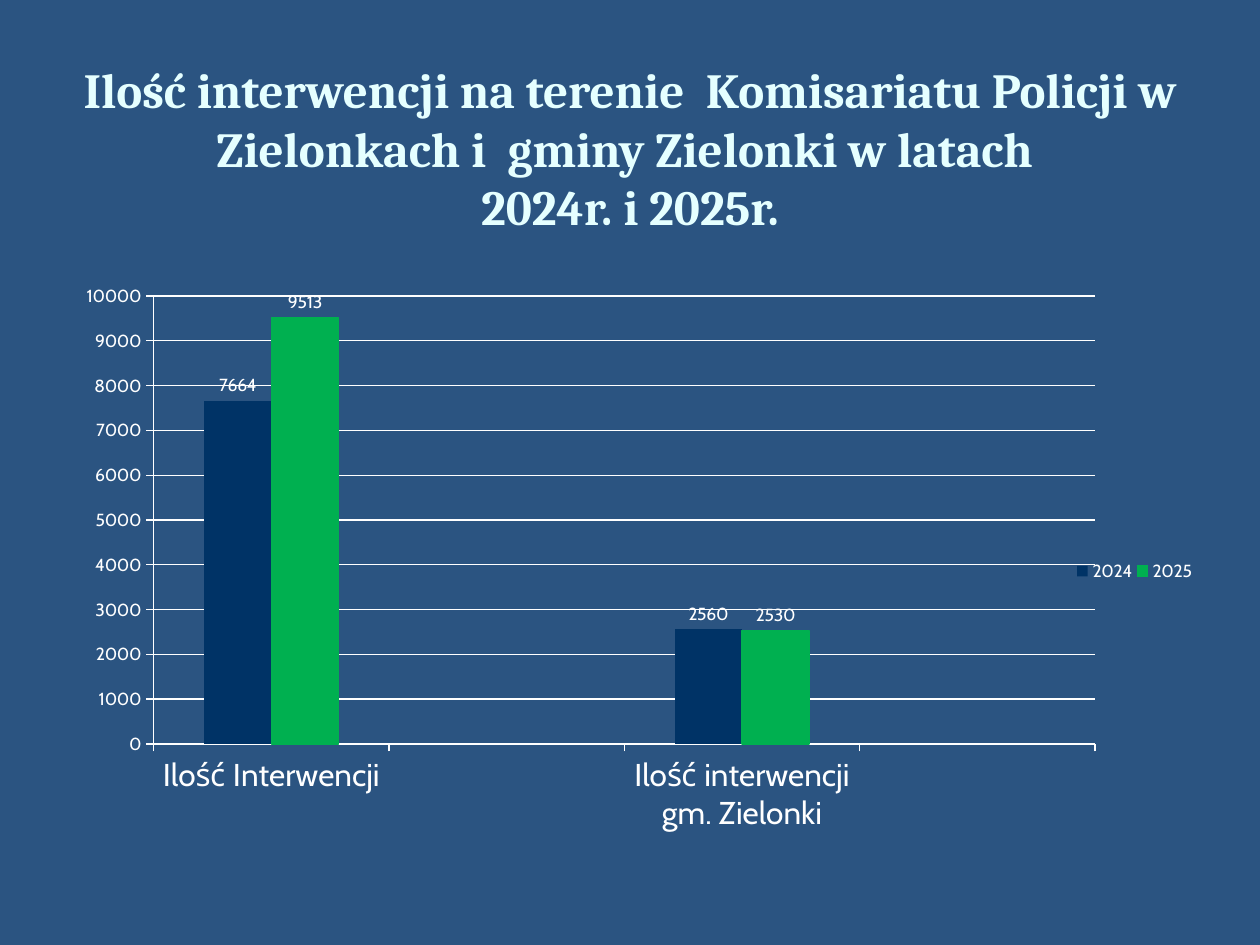
from dataclasses import dataclass

from lxml import etree
from pptx import Presentation
from pptx import util as u
from pptx.chart import data as chart_data
from pptx.dml.color import RGBColor
from pptx.enum import chart as chart_enum
from pptx.enum import text
from pptx.oxml.ns import qn

BACKGROUND = RGBColor(0x2B, 0x54, 0x81)
TITLE_COLOR = RGBColor(0xE5, 0xFF, 0xFF)
WHITE = RGBColor(0xFF, 0xFF, 0xFF)
NAVY = RGBColor(0x00, 0x33, 0x66)
GREEN = RGBColor(0x00, 0xB0, 0x50)

TITLE = ("Ilość interwencji na terenie  Komisariatu Policji w Zielonkach i  "
         "gminy Zielonki w latach \v2024r. i 2025r.")
CATEGORIES = ["Ilość Interwencji", "", "Ilość interwencji gm. Zielonki", ""]


@dataclass
class YearSeries:
    name: str
    values: list
    color: RGBColor


YEARS = [
    YearSeries("2024", [7664, None, 2560, None], NAVY),
    YearSeries("2025", [9513, None, 2530, None], GREEN),
]


def set_font(font, size: float, color: RGBColor = WHITE, name: str = "Cabin") -> None:
    font.name = name
    font.size = u.Pt(size)
    font.color.rgb = color


def set_layout(parent, index: int, bounds: dict, inner: bool = False) -> None:
    """Fix a chart part's place, in fractions of the chart area."""
    for old in parent.findall(qn("c:layout")):
        parent.remove(old)
    layout = etree.Element(qn("c:layout"))
    manual = etree.SubElement(layout, qn("c:manualLayout"))
    settings = {"layoutTarget": "inner"} if inner else {}
    settings |= {"xMode": "edge", "yMode": "edge"} | bounds
    for tag, value in settings.items():
        etree.SubElement(manual, qn(f"c:{tag}")).set("val", str(value))
    parent.insert(index, layout)


def add_title(slide) -> None:
    title = slide.shapes.title
    title.left, title.top = u.Inches(0.5), u.Inches(0.42)
    title.width, title.height = u.Inches(9), u.Inches(1.5)
    frame = title.text_frame
    frame.text = TITLE
    frame.word_wrap = True
    frame.auto_size = text.MSO_AUTO_SIZE.NONE
    frame.vertical_anchor = text.MSO_ANCHOR.MIDDLE
    para = frame.paragraphs[0]
    para.alignment = text.PP_ALIGN.CENTER
    for span in para.runs:
        set_font(span.font, 28, TITLE_COLOR, "Cambria")
        span.font.bold = True


def format_axes(chart) -> None:
    values, categories = chart.value_axis, chart.category_axis
    values.minimum_scale, values.maximum_scale = 0, 10000
    values.major_unit = 1000
    values.has_major_gridlines = True
    for axis, size in ((values, 10), (categories, 18)):
        axis.major_tick_mark = chart_enum.XL_TICK_MARK.OUTSIDE
        axis.minor_tick_mark = chart_enum.XL_TICK_MARK.NONE
        set_font(axis.tick_labels.font, size)
    for line in (values.format.line, categories.format.line,
                 values.major_gridlines.format.line):
        line.color.rgb = WHITE
        line.width = u.Pt(0.75)


def format_series(plot) -> None:
    plot.gap_width = 150
    plot.overlap = 0
    plot.vary_by_categories = False
    for series, year in zip(plot.series, YEARS):
        series.format.fill.solid()
        series.format.fill.fore_color.rgb = year.color
        series.invert_if_negative = False
        labels = series.data_labels
        labels.show_value = True
        labels.position = chart_enum.XL_LABEL_POSITION.OUTSIDE_END
        set_font(labels.font, 10)
    green_line = plot.series[1].format.line
    green_line.color.rgb = GREEN
    green_line.width = u.Pt(0.75)


def add_interventions_chart(slide) -> None:
    data = chart_data.CategoryChartData()
    data.categories = CATEGORIES
    for year in YEARS:
        data.add_series(year.name, year.values)
    chart = slide.shapes.add_chart(
        chart_enum.XL_CHART_TYPE.COLUMN_CLUSTERED,
        u.Inches(0.5), u.Inches(2.17), u.Inches(9), u.Inches(4.5), data).chart
    chart.has_title = False
    set_font(chart.font, 18)
    format_axes(chart)
    format_series(chart.plots[0])
    chart.has_legend = True
    legend = chart.legend
    legend.position = chart_enum.XL_LEGEND_POSITION.RIGHT
    legend.include_in_layout = False
    set_font(legend.font, 10)
    plot_area = chart.element.find(".//" + qn("c:plotArea"))
    set_layout(plot_area, 0, {"x": 0.08, "y": 0.04, "w": 0.83, "h": 0.79}, inner=True)
    legend_element = chart.element.find(".//" + qn("c:legend"))
    set_layout(legend_element, 1, {"x": 0.89, "y": 0.5, "w": 0.11, "h": 0.05})


def main() -> None:
    deck = Presentation()
    deck.slide_width, deck.slide_height = u.Inches(10), u.Inches(7.5)
    page = deck.slides.add_slide(deck.slide_layouts[5])
    page.background.fill.solid()
    page.background.fill.fore_color.rgb = BACKGROUND
    add_title(page)
    add_interventions_chart(page)
    deck.save("out.pptx")


if __name__ == "__main__":
    main()
